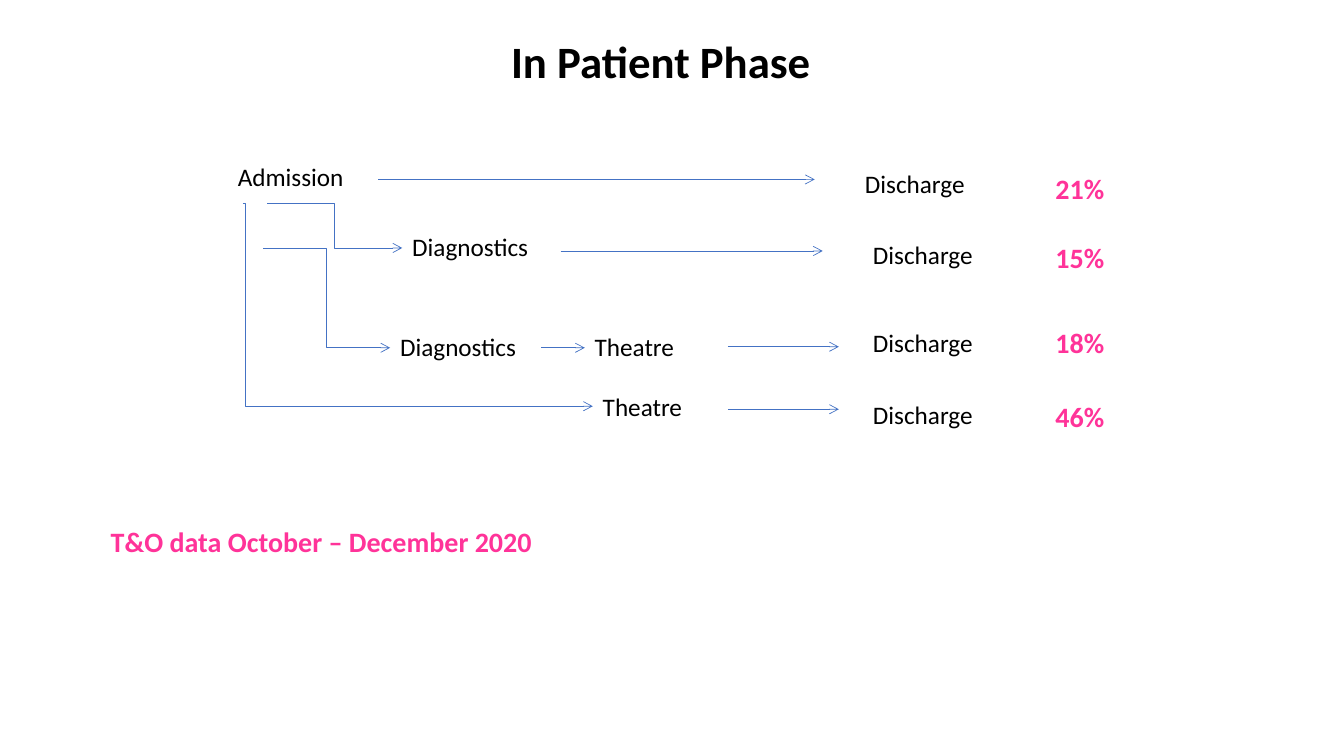
from lxml import etree
from pptx import Presentation
from pptx.dml.color import RGBColor
from pptx.enum import shapes, text
from pptx.oxml.ns import qn
from pptx.util import Inches, Pt

BLACK, PINK, BLUE = "000000", "FF3399", "4472C4"


def color(hex_code):
    return RGBColor.from_string(hex_code)


def add_text(slide, words, left, top, width, height, size=18, hex_code=BLACK,
             bold=False, align=text.PP_ALIGN.LEFT):
    box = slide.shapes.add_textbox(*map(Inches, (left, top, width, height)))
    frame = box.text_frame
    frame.word_wrap = True
    frame.auto_size = text.MSO_AUTO_SIZE.SHAPE_TO_FIT_TEXT
    paragraph = frame.paragraphs[0]
    paragraph.alignment = align
    run = paragraph.add_run()
    run.text = words
    run.font.name = "Calibri"
    run.font.size = Pt(size)
    run.font.bold = bold
    run.font.color.rgb = color(hex_code)


def add_arrow(slide, x1, y1, x2, y2, bend=None):
    """Draw an arrow; bend is the elbow position in 1/100000 of its width."""
    kind = shapes.MSO_CONNECTOR.STRAIGHT if bend is None else shapes.MSO_CONNECTOR.ELBOW
    arrow = slide.shapes.add_connector(kind, *map(Inches, (x1, y1, x2, y2)))
    arrow.line.color.rgb = color(BLUE)
    arrow.line.width = Pt(0.5)
    properties = arrow._element.spPr
    etree.SubElement(properties.find(qn("a:ln")), qn("a:tailEnd"), type="arrow")
    etree.SubElement(properties, qn("a:effectLst"))
    if bend is not None:
        geometry = properties.find(qn("a:prstGeom"))
        adjustments = geometry.find(qn("a:avLst"))
        if adjustments is None:
            adjustments = etree.SubElement(geometry, qn("a:avLst"))
        etree.SubElement(adjustments, qn("a:gd"), name="adj1", fmla=f"val {bend}")


def add_pathways(slide, left, top):
    # Stages: name, offset from the box, width
    stages = [
        ("Admission", 0.06, 0.05, 2.05),
        ("Diagnostics", 1.79, 0.75, 2.05),
        ("Diagnostics", 1.67, 1.74, 1.5),
        ("Theatre", 3.6, 1.74, 1.26),
        ("Theatre", 3.68, 2.33, 1.26),
        ("Discharge", 6.28, 0.12, 2.05),
        ("Discharge", 6.36, 0.83, 2.05),
        ("Discharge", 6.36, 1.7, 2.05),
        ("Discharge", 6.36, 2.41, 2.05),
    ]
    for stage, x, y, width in stages:
        add_text(slide, stage, left + x, top + y, width, 0.4)

    # Straight steps: start, end, height
    for start, end, y in [(1.55, 5.88, 0.28), (3.36, 5.96, 0.99), (3.17, 3.6, 1.95),
                          (5.02, 6.12, 1.94), (5.02, 6.12, 2.56)]:
        add_arrow(slide, left + start, top + y, left + end, top + y)

    # Branches from admission
    for x1, y1, x2, y2, bend in [(0.45, 0.52, 1.79, 0.96, 50000),
                                 (0.41, 0.96, 1.67, 1.95, 50000),
                                 (0.21, 0.52, 3.68, 2.53, 600)]:
        add_arrow(slide, left + x1, top + y1, left + x2, top + y2, bend)


def add_shares(slide, left, top, width):
    for share, y in [("21%", 0), ("15%", 0.69), ("18%", 1.53), ("46%", 2.26)]:
        add_text(slide, share, left, top + y, width, 0.44,
                 size=20, hex_code=PINK, bold=True)


def add_title(slide, left, top, width, height):
    add_text(slide, "In Patient Phase", left, top, width, height,
             size=32, bold=True, align=text.PP_ALIGN.CENTER)


def add_data_note(slide, left, top, width, height):
    add_text(slide, "T&O data October – December 2020", left, top, width, height,
             size=20, hex_code=PINK, bold=True)


def main():
    deck = Presentation()
    deck.slide_width, deck.slide_height = Inches(13.33), Inches(7.5)
    slide = deck.slides.add_slide(deck.slide_layouts[6])
    add_title(slide, 4.23, 0.29, 4.65, 0.64)
    add_pathways(slide, 2.2, 1.5)
    add_shares(slide, 10.37, 1.65, 1.1)
    add_data_note(slide, 1, 5.15, 6.14, 0.44)
    deck.save("out.pptx")


if __name__ == "__main__":
    main()
